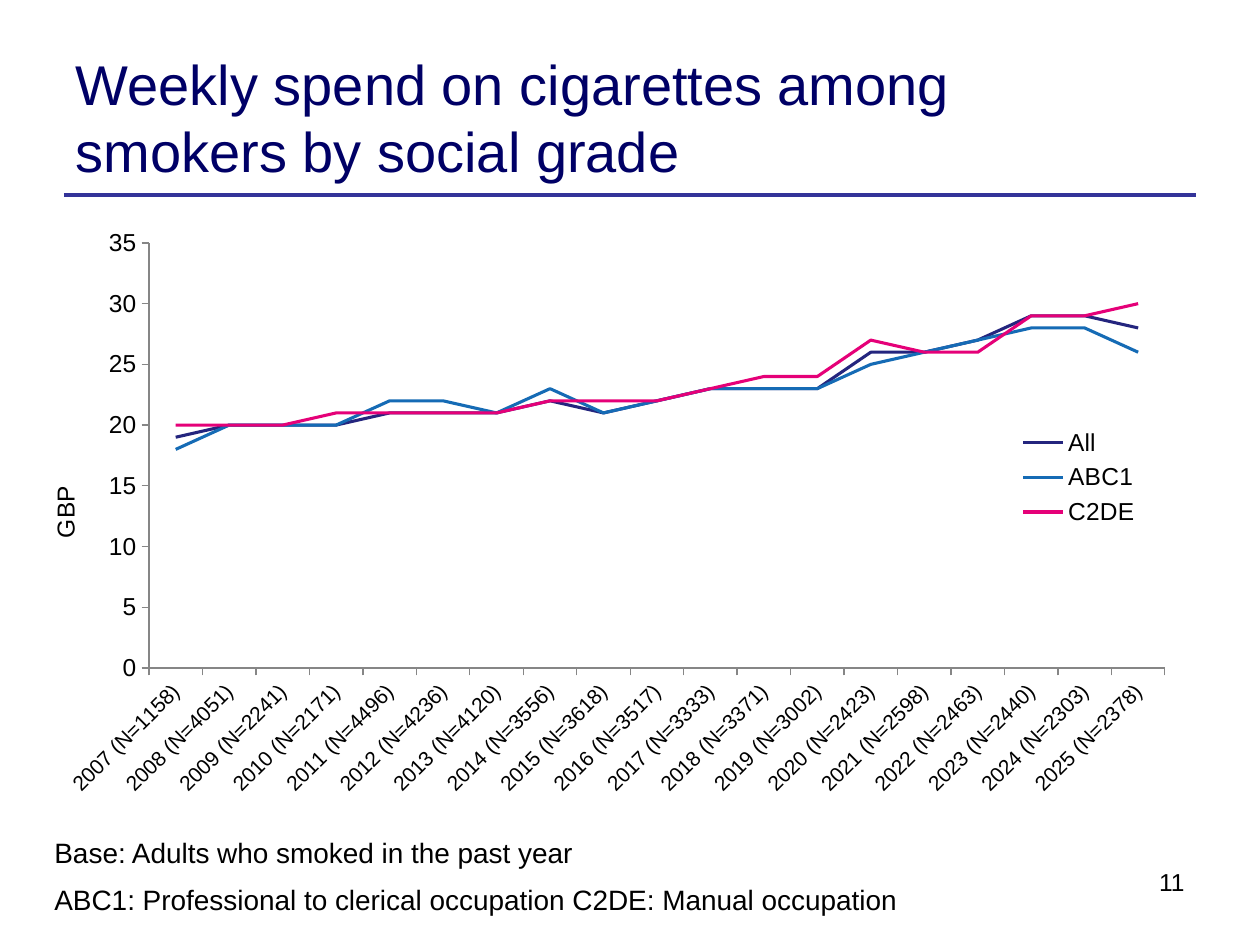
"""Build a slide charting weekly cigarette spend by social grade."""
from dataclasses import dataclass

from lxml import etree
from pptx import Presentation
from pptx.chart.data import CategoryChartData
from pptx.dml.color import RGBColor
from pptx.enum.chart import XL_CHART_TYPE, XL_LEGEND_POSITION, XL_TICK_MARK
from pptx.enum.shapes import MSO_CONNECTOR
from pptx.enum.text import MSO_ANCHOR, MSO_AUTO_SIZE, PP_ALIGN
from pptx.oxml.ns import qn
from pptx.util import Emu, Pt

LINE_CHART = XL_CHART_TYPE.LINE
LEGEND_RIGHT = XL_LEGEND_POSITION.RIGHT
TICK_OUT, TICK_NONE = XL_TICK_MARK.OUTSIDE, XL_TICK_MARK.NONE
STRAIGHT = MSO_CONNECTOR.STRAIGHT
MIDDLE = MSO_ANCHOR.MIDDLE
FIXED, GROW = MSO_AUTO_SIZE.NONE, MSO_AUTO_SIZE.SHAPE_TO_FIT_TEXT
LEFT, RIGHT = PP_ALIGN.LEFT, PP_ALIGN.RIGHT
FONT, BLACK, GREY = "Arial", "000000", "868686"
CHART_BOX = (44, 220, 1153, 587)
FIRST_YEAR = 2007
SAMPLES = [1158, 4051, 2241, 2171, 4496, 4236, 4120, 3556, 3618, 3517,
           3333, 3371, 3002, 2423, 2598, 2463, 2440, 2303, 2378]


@dataclass(frozen=True)
class Series:
    """One line of the chart."""
    name: str
    color: str
    values: tuple


@dataclass(frozen=True)
class Label:
    """A plain text box, in px."""
    text: str
    box: tuple
    size: int
    align: PP_ALIGN = LEFT
    grow: bool = True


SERIES = [
    Series("All", "24257E", (19, 20, 20, 20, 21, 21, 21, 22, 21, 22,
                             23, 23, 23, 26, 26, 27, 29, 29, 28)),
    Series("ABC1", "156BB5", (18, 20, 20, 20, 22, 22, 21, 23, 21, 22,
                              23, 23, 23, 25, 26, 27, 28, 28, 26)),
    Series("C2DE", "E50078", (20, 20, 20, 21, 21, 21, 21, 22, 22, 22,
                              23, 24, 24, 27, 26, 26, 29, 29, 30)),
]
LABELS = [
    Label("11", (848, 861, 349, 66), 14, RIGHT, False),
    Label("ABC1: Professional to clerical occupation C2DE: Manual occupation",
          (42, 876, 878, 47), 16),
    Label("Base: Adults who smoked in the past year", (42, 829, 551, 47), 16),
]


def px(n: int) -> Emu:
    """Turn px into EMU at 126 px to the inch."""
    return Emu(round(n * 914400 / 126))


def rgb(color: str) -> RGBColor:
    """Turn a hex string into a colour."""
    return RGBColor.from_string(color)


def style_font(font, size: int, color: str = BLACK) -> None:
    """Set face, size and colour of a font, not bold."""
    font.name, font.size, font.bold = FONT, Pt(size), False
    font.color.rgb = rgb(color)


def add_run(p, text: str, size: int, color: str = BLACK) -> None:
    """Add one styled run to a paragraph."""
    r = p.add_run()
    r.text = text
    style_font(r.font, size, color)


def add_title(s, text: str) -> None:
    """Place and fill the title placeholder."""
    sp = s.shapes.title
    sp.left, sp.top, sp.width, sp.height = map(px, (63, 38, 994, 158))
    tf = sp.text_frame
    tf.vertical_anchor = MIDDLE
    tf.auto_size = FIXED
    p = tf.paragraphs[0]
    p.alignment = LEFT
    add_run(p, text, 32, "000066")


def add_rule(s) -> None:
    """Draw the line under the title."""
    sp = s.shapes.add_connector(STRAIGHT, px(64), px(195), px(1196), px(195))
    sp.line.color.rgb = rgb("333399")
    sp.line.width = Pt(2.25)
    etree.SubElement(sp._element.spPr, qn("a:effectLst"))


def add_label(s, label: Label) -> None:
    """Draw a text box with one paragraph."""
    tf = s.shapes.add_textbox(*map(px, label.box)).text_frame
    tf.word_wrap = not label.grow
    if label.grow:
        tf.auto_size = GROW
    p = tf.paragraphs[0]
    p.alignment = label.align
    add_run(p, label.text, label.size)


def set_layout(parent, index: int, *box: int, inner: bool = False) -> None:
    """Place a chart part at a box given in slide px."""
    for old in parent.findall(qn("c:layout")):
        parent.remove(old)
    left, top, width, height = CHART_BOX
    layout = etree.Element(qn("c:layout"))
    manual = etree.SubElement(layout, qn("c:manualLayout"))
    items = [("layoutTarget", "inner")] if inner else []
    items += [("xMode", "edge"), ("yMode", "edge")]
    offsets = (left, top, 0, 0)
    spans = (width, height, width, height)
    items += [(tag, (n - offset) / span)
              for tag, n, offset, span in zip("xywh", box, offsets, spans)]
    for tag, val in items:
        etree.SubElement(manual, qn(f"c:{tag}")).set("val", str(val))
    parent.insert(index, layout)


def style_axis(axis, size: int) -> None:
    """Set ticks, line and label font of an axis."""
    axis.has_major_gridlines = False
    axis.major_tick_mark, axis.minor_tick_mark = TICK_OUT, TICK_NONE
    axis.format.line.color.rgb = rgb(GREY)
    axis.format.line.width = Pt(0.75)
    style_font(axis.tick_labels.font, size)


def add_spend_chart(s) -> None:
    """Draw the line chart of weekly spend."""
    data = CategoryChartData(number_format="General")
    data.categories = [f"{year} (N={n})" for year, n in enumerate(SAMPLES, FIRST_YEAR)]
    for series in SERIES:
        data.add_series(series.name, series.values)
    chart = s.shapes.add_chart(LINE_CHART, *map(px, CHART_BOX), data).chart
    style_font(chart.font, 18)
    chart.has_title = False
    plot = chart.plots[0]
    plot.vary_by_categories = False
    for line, series in zip(plot.series, SERIES):
        line.smooth = False
        line.format.line.color.rgb = rgb(series.color)
        line.format.line.width = Pt(1.75)

    cat, val = chart.category_axis, chart.value_axis
    style_axis(cat, 12)
    style_axis(val, 14)
    cat._element.find(f"{qn('c:txPr')}/{qn('a:bodyPr')}").set("rot", "-2700000")
    val.minimum_scale, val.maximum_scale, val.major_unit = 0, 35, 5
    tf = val.axis_title.text_frame
    add_run(tf.paragraphs[0], "GBP", 14)
    body = tf._txBody.find(qn("a:bodyPr"))
    body.set("rot", "-5400000")
    body.set("vert", "horz")
    set_layout(val.axis_title._element, 1, 45, 481)

    chart.has_legend = True
    legend = chart.legend
    legend.position, legend.include_in_layout = LEGEND_RIGHT, False
    style_font(legend.font, 14)
    set_layout(legend._element, 1, 1010, 422, 138, 111)
    plot_area = chart._chartSpace.chart.plotArea
    set_layout(plot_area, 0, 149, 243, 1016, 425, inner=True)


def main() -> None:
    """Build and save the slide."""
    prs = Presentation()
    prs.slide_width, prs.slide_height = px(1260), px(945)
    s = prs.slides.add_slide(prs.slide_layouts[5])
    add_rule(s)
    add_title(s, "Weekly spend on cigarettes among smokers by social grade")
    add_spend_chart(s)
    for label in LABELS:
        add_label(s, label)
    prs.save("out.pptx")


if __name__ == "__main__":
    main()
